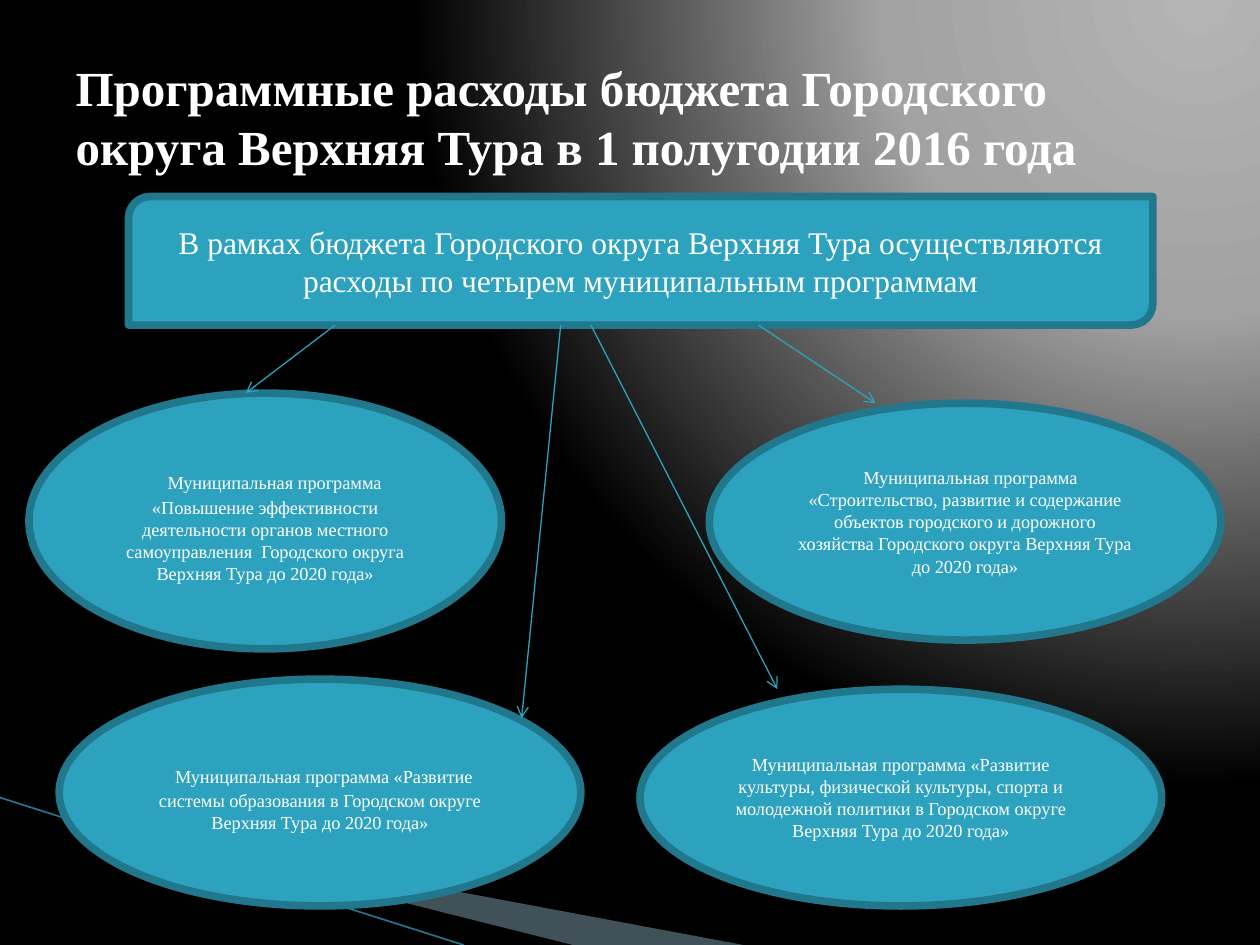
"""Builds the slide on programme spending of the Verkhnyaya Tura budget."""
import pptx
import pptx.dml.color
import pptx.enum.shapes
import pptx.enum.text
import pptx.oxml
import pptx.oxml.ns
import pptx.util

Inches = pptx.util.Inches
SHAPES = pptx.enum.shapes.MSO_SHAPE
ALIGN = pptx.enum.text.PP_ALIGN
SERIF, MONO = "Times New Roman", "Courier New"
WHITE, TEAL, DARK_TEAL = "FFFFFF", "2DA2BF", "21788D"
NAMESPACE = 'xmlns:a="http://schemas.openxmlformats.org/drawingml/2006/main"'

TITLE = "Программные расходы бюджета Городского округа Верхняя Тура в 1 полугодии 2016 года"
SUMMARY = ("В рамках бюджета Городского округа Верхняя Тура осуществляются "
           "расходы по четырем муниципальным программам")
PROGRAMMES = [
    ((0.23, 3.12, 3.75, 2.03), (" ", 18, MONO),
     "«Повышение эффективности деятельности органов местного самоуправления  "
     "Городского округа Верхняя Тура до 2020 года»"),
    ((5.63, 3.2, 4.06, 1.88), (" ", 10.5, MONO),
     "«Строительство, развитие и содержание объектов городского и дорожного "
     "хозяйства Городского округа Верхняя Тура до 2020 года»"),
    ((5.08, 5.47, 4.14, 1.72), None,
     "«Развитие культуры, физической культуры, спорта и молодежной политики "
     "в Городском округе Верхняя Тура до 2020 года»"),
    ((0.47, 5.39, 4.14, 1.8), (" ", 18, SERIF),
     "«Развитие системы образования в Городском округе Верхняя Тура до 2020 года»"),
]
ARROWS = [((2.66, 2.58), (1.95, 3.12)), ((4.45, 2.58), (4.14, 5.7)),
          ((4.69, 2.58), (6.17, 5.47)), ((6.02, 2.58), (6.95, 3.2))]


def colour(value):
    """Return an RGB colour for a hex string."""
    return pptx.dml.color.RGBColor.from_string(value)


def paint_background(slide):
    """Give the slide a circular grey gradient."""
    slide.background.fill.solid()
    solid = slide.background._cSld.find(".//" + pptx.oxml.ns.qn("a:solidFill"))
    stops = "".join(f'<a:gs pos="{position * 1000}"><a:srgbClr val="{shade}"/></a:gs>'
                    for position, shade in [(0, "B4B4B4"), (40, "A2A2A2"), (100, "000000")])
    gradient = pptx.oxml.parse_xml(
        f'<a:gradFill {NAMESPACE} rotWithShape="1"><a:gsLst>{stops}</a:gsLst>'
        '<a:path path="circle"><a:fillToRect l="95000" t="-106000" r="5000" b="206000"/>'
        '</a:path></a:gradFill>')
    solid.getparent().replace(solid, gradient)


def add_wedge(slide, points, fill, opacity=100):
    """Draw a filled outline without a border."""
    corners = [(Inches(x), Inches(y)) for x, y in points]
    builder = slide.shapes.build_freeform(*corners[0])
    builder.add_line_segments(corners[1:], close=True)
    wedge = builder.convert_to_shape()
    wedge.shadow.inherit = False
    wedge.fill.solid()
    wedge.fill.fore_color.rgb = colour(fill)
    wedge.line.fill.background()
    if opacity < 100:
        tint = wedge._element.spPr.find(".//" + pptx.oxml.ns.qn("a:srgbClr"))
        tint.append(pptx.oxml.parse_xml(f'<a:alpha {NAMESPACE} val="{opacity * 1000}"/>'))


def add_line(slide, start, end, stroke, width, arrow=False):
    """Draw a straight line, with an open arrowhead if asked."""
    line = slide.shapes.add_connector(
        pptx.enum.shapes.MSO_CONNECTOR.STRAIGHT, *map(Inches, start + end))
    line.line.color.rgb = colour(stroke)
    line.line.width = pptx.util.Pt(width)
    if arrow:
        line.line._get_or_add_ln().append(
            pptx.oxml.parse_xml(f'<a:tailEnd {NAMESPACE} type="arrow"/>'))
    line._element.spPr.append(pptx.oxml.parse_xml(f"<a:effectLst {NAMESPACE}/>"))


def write(frame, runs, alignment, bold=False):
    """Write white runs of (text, size, font) into one paragraph."""
    frame_format = {"word_wrap": True,
                    "auto_size": pptx.enum.text.MSO_AUTO_SIZE.NONE,
                    "vertical_anchor": pptx.enum.text.MSO_ANCHOR.MIDDLE}
    for attribute, value in frame_format.items():
        setattr(frame, attribute, value)
    paragraph = frame.paragraphs[0]
    paragraph.alignment = alignment
    for text, size, font in runs:
        run = paragraph.add_run()
        run.text = text
        run_format = {"size": pptx.util.Pt(size), "name": font, "bold": bold}
        for attribute, value in run_format.items():
            setattr(run.font, attribute, value)
        run.font.color.rgb = colour(WHITE)


def add_title(slide):
    """Place and write the slide title."""
    title = slide.shapes.title
    for side, length in zip(("left", "top", "width", "height"), (0.5, 0.3, 9, 1.25)):
        setattr(title, side, Inches(length))
    write(title.text_frame, [(TITLE, 28, SERIF)], ALIGN.LEFT, bold=True)


def add_panel(slide, outline, box, runs):
    """Draw a teal panel with centred text."""
    panel = slide.shapes.add_shape(outline, *map(Inches, box))
    panel.shadow.inherit = False
    panel.fill.solid()
    panel.fill.fore_color.rgb = colour(TEAL)
    panel.line.color.rgb = colour(DARK_TEAL)
    panel.line.width = pptx.util.Pt(4.33)
    write(panel.text_frame, runs, ALIGN.CENTER)


def main():
    """Build and save the slide."""
    deck = pptx.Presentation()
    deck.slide_width, deck.slide_height = Inches(10), Inches(7.5)
    slide = deck.slides.add_slide(deck.slide_layouts[5])
    paint_background(slide)
    add_wedge(slide, [(0.55, 6.5), (5.9, 7.5), (4.54, 7.5)], "A0CBDC", 40)
    add_wedge(slide, [(0.53, 6.49), (4.54, 7.5), (3.68, 7.5)], "000000")
    add_line(slide, (0, 6.33), (3.68, 7.5), DARK_TEAL, 0.95)
    add_title(slide)
    add_panel(slide, SHAPES.ROUND_2_DIAG_RECTANGLE, (1.02, 1.56, 8.13, 1.02),
              [(SUMMARY, 18, SERIF)])
    for box, lead, name in PROGRAMMES:
        programme = ("Муниципальная программа " + name, 10.5, SERIF)
        add_panel(slide, SHAPES.OVAL, box, [lead, programme] if lead else [programme])
    for start, end in ARROWS:
        add_line(slide, start, end, TEAL, 0.75, arrow=True)
    deck.save("out.pptx")


if __name__ == "__main__":
    main()
